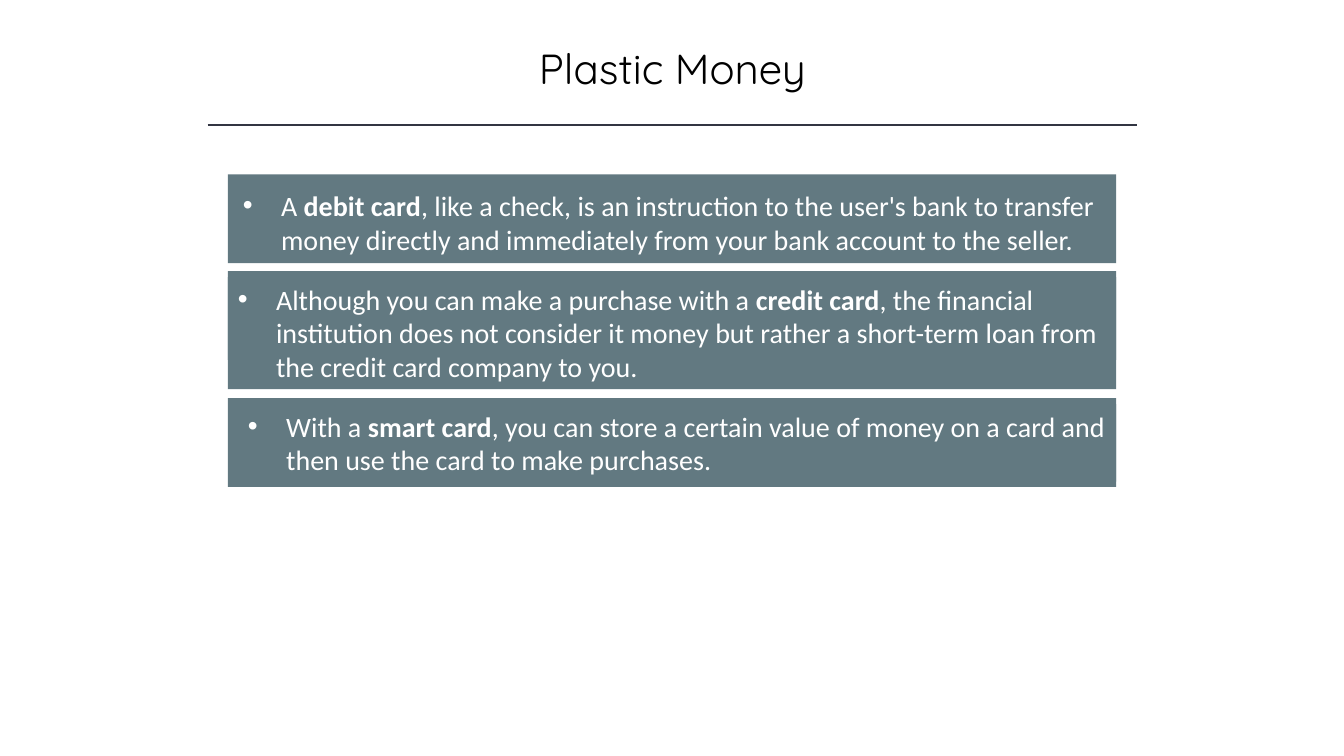
from lxml import etree
from pptx import Presentation
from pptx.dml.color import RGBColor
from pptx.enum.shapes import MSO_CONNECTOR as CONNECTOR, MSO_SHAPE as SHAPE
from pptx.enum.text import MSO_ANCHOR as ANCHOR, PP_ALIGN as ALIGN
from pptx.oxml.ns import qn
from pptx.util import Inches, Pt

COLORS = {"title": "000000", "rule": "323542", "band": "627981", "body": "FFFFFF"}
BAND_LEFT, BAND_WIDTH, BAND_HEIGHT = 2.26, 8.81, 0.88

# Band top, then left, top, width and height of the text, then lead, term and rest
CARDS = [
    (1.73, (2.31, 1.82, 8.71, 0.77),
     ("A ", "debit card",
      ", like a check, is an instruction to the user's bank to transfer money "
      "directly and immediately from your bank account to the seller.")),
    (2.69, (2.26, 2.75, 8.81, 1.11),
     ("Although you can make a purchase with a ", "credit card",
      ", the financial institution does not consider it money but rather "
      "a short-term loan from the credit card company to you.")),
    (3.95, (2.36, 4.01, 8.71, 0.77),
     ("With a ", "smart card",
      ", you can store a certain value of money on a card and then use the card "
      "to make purchases.")),
]


def rgb(name):
    return RGBColor.from_string(COLORS[name])


def style_font(paragraph, name, size, color):
    paragraph.font.name = name
    paragraph.font.size = Pt(size)
    paragraph.font.color.rgb = rgb(color)


def add_title(slide, text):
    title = slide.shapes.add_textbox(Inches(1.67), Inches(0.37), Inches(10), Inches(1.11))
    title.text_frame.word_wrap = True
    heading = title.text_frame.paragraphs[0]
    heading.text = text
    heading.alignment = ALIGN.CENTER
    style_font(heading, "Quicksand", 30, "title")


def add_rule(slide):
    rule = slide.shapes.add_connector(
        CONNECTOR.STRAIGHT, Inches(2.06), Inches(1.24), Inches(11.28), Inches(1.24))
    rule.line.color.rgb = rgb("rule")
    rule.line.width = Pt(1)
    etree.SubElement(rule._element.spPr, qn("a:effectLst"))


def add_band(slide, left, top, width, height):
    band = slide.shapes.add_shape(
        SHAPE.RECTANGLE, Inches(left), Inches(top), Inches(width), Inches(height))
    band.shadow.inherit = False
    band.fill.solid()
    band.fill.fore_color.rgb = rgb("band")
    band.line.fill.background()
    return band


def add_bullet(paragraph):
    """Give the paragraph a bullet with a hanging indent."""
    properties = paragraph._p.get_or_add_pPr()
    indent = Inches(0.38)
    properties.set("marL", str(indent))
    properties.set("indent", str(-indent))
    font = etree.Element(qn("a:buFont"), typeface="Arial")
    bullet = etree.Element(qn("a:buChar"), char="•")
    properties.insert(0, font)
    properties.insert(1, bullet)


def add_card(slide, band_top, text_box, parts):
    add_band(slide, BAND_LEFT, band_top, BAND_WIDTH, BAND_HEIGHT)
    frame = add_band(slide, *text_box).text_frame
    frame.word_wrap = True
    frame.vertical_anchor = ANCHOR.TOP
    definition = frame.paragraphs[0]
    definition.alignment = ALIGN.LEFT
    add_bullet(definition)
    style_font(definition, "Calibri", 20, "body")
    lead, term, rest = (definition.add_run() for _ in parts)
    lead.text, term.text, rest.text = parts
    term.font.bold = True


def main():
    deck = Presentation()
    deck.slide_width = Inches(13.33)
    deck.slide_height = Inches(7.5)
    slide = deck.slides.add_slide(deck.slide_layouts[6])
    add_title(slide, "Plastic Money")
    add_rule(slide)
    for card in CARDS:
        add_card(slide, *card)
    deck.save("out.pptx")


if __name__ == "__main__":
    main()
